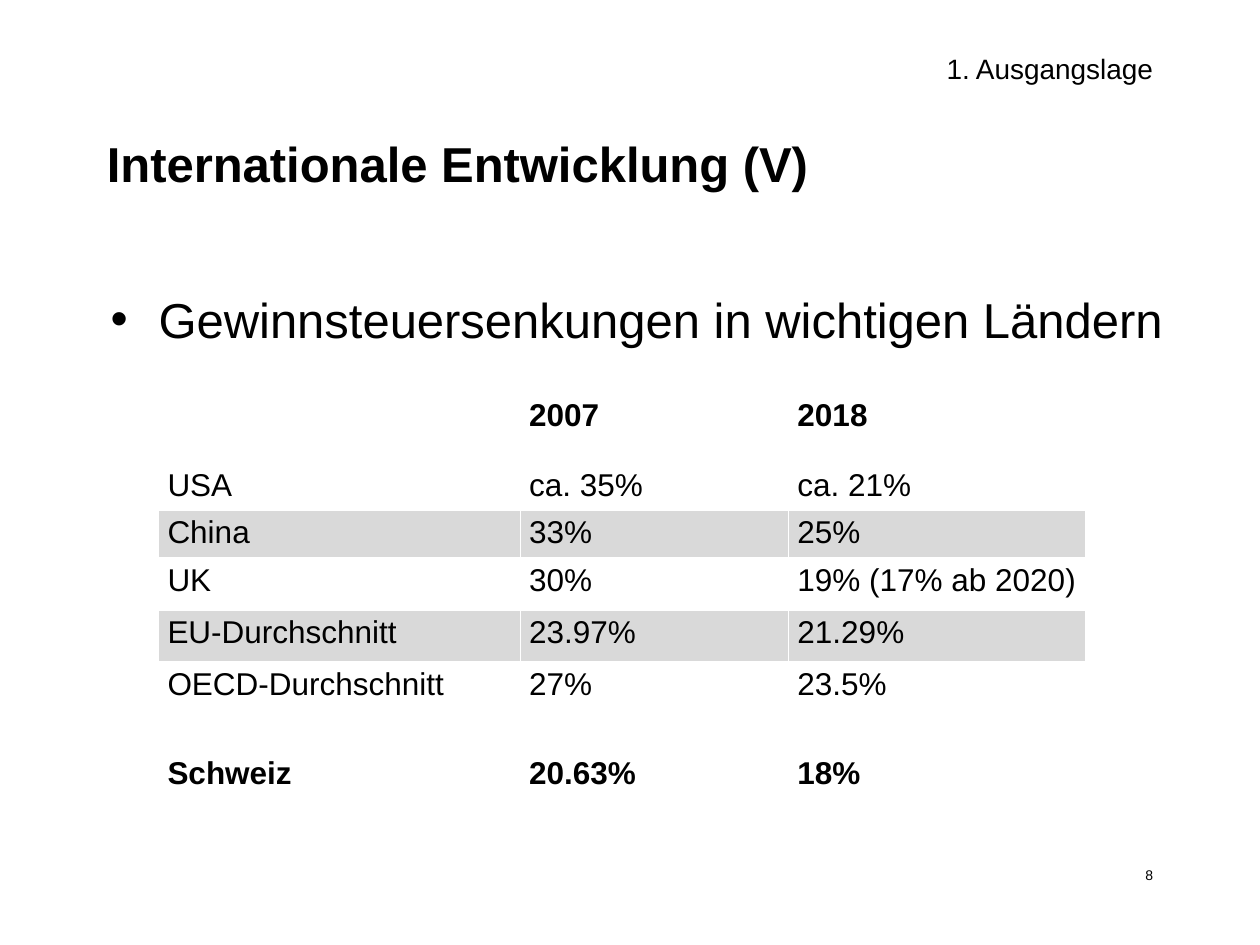
from dataclasses import dataclass

from lxml.etree import SubElement
from pptx import Presentation
from pptx.dml.color import RGBColor
from pptx.enum.text import MSO_ANCHOR, PP_ALIGN
from pptx.oxml.ns import qn
from pptx.util import Inches, Pt


@dataclass(frozen=True)
class Theme:
    font: str = "Arial"
    ink: str = "000000"
    paper: str = "FFFFFF"
    band: str = "D9D9D9"
    heading: int = 28
    section: int = 16
    table: int = 18
    number: int = 8
    rule: int = 1
    header_rule: int = 3


THEME = Theme()
TITLE = "Internationale Entwicklung (V)"
STATEMENT = "Gewinnsteuersenkungen in wichtigen Ländern"
SECTION = "1. Ausgangslage"
PAGE_NUMBER = "8"
TAX_RATES = [
    ("", "2007", "2018"),
    ("USA", "ca. 35%", "ca. 21%"),
    ("China", "33%", "25%"),
    ("UK", "30%", "19% (17% ab 2020)"),
    ("EU-Durchschnitt", "23.97%", "21.29%"),
    ("OECD-Durchschnitt", "27%", "23.5%"),
    ("Schweiz", "20.63%", "18%"),
]
BOLD_ROWS = {0, 6}
BANDED_ROWS = {2, 4}
COLUMN_WIDTHS = [2.87, 2.13, 2.36]
ROW_HEIGHTS = [0.55, 0.35, 0.35, 0.41, 0.41, 0.71, 0.41]


def style(font, size, bold=False):
    font.name = THEME.font
    font.size = Pt(size)
    font.bold = bold
    font.color.rgb = RGBColor.from_string(THEME.ink)


def add_text(slide, text, box, size, bold=False, align=PP_ALIGN.LEFT, anchor=MSO_ANCHOR.TOP):
    frame = slide.shapes.add_textbox(*map(Inches, box)).text_frame
    frame.word_wrap = True
    frame.vertical_anchor = anchor
    paragraph = frame.paragraphs[0]
    paragraph.alignment = align
    run = paragraph.add_run()
    run.text = text
    style(run.font, size, bold)
    return paragraph


def add_bullet(paragraph, indent):
    properties = paragraph._p.get_or_add_pPr()
    properties.set("marL", str(Inches(indent)))
    properties.set("indent", str(-Inches(indent)))
    SubElement(properties, qn("a:buFont"), typeface=THEME.font)
    SubElement(properties, qn("a:buChar"), char="•")


def add_borders(cell, bottom_width):
    properties = cell._tc.get_or_add_tcPr()
    widths = {"lnL": THEME.rule, "lnR": THEME.rule, "lnT": THEME.rule, "lnB": bottom_width}
    for side, width in widths.items():
        line = SubElement(properties, qn(f"a:{side}"), w=str(Pt(width)))
        fill = SubElement(line, qn("a:solidFill"))
        SubElement(fill, qn("a:srgbClr"), val=THEME.paper)


def fill_cell(cell, text, row):
    cell.margin_left = cell.margin_right = Inches(0.07)
    cell.margin_top = cell.margin_bottom = Inches(0.04)
    add_borders(cell, THEME.header_rule if row == 0 else THEME.rule)
    if row in BANDED_ROWS:
        cell.fill.solid()
        cell.fill.fore_color.rgb = RGBColor.from_string(THEME.band)
    else:
        cell.fill.background()
    if text:
        run = cell.text_frame.paragraphs[0].add_run()
        run.text = text
        style(run.font, THEME.table, row in BOLD_ROWS)


def add_tax_table(slide, left, top):
    size = (sum(COLUMN_WIDTHS), sum(ROW_HEIGHTS))
    table = slide.shapes.add_table(
        len(TAX_RATES), len(COLUMN_WIDTHS), *map(Inches, (left, top, *size))
    ).table
    table.horz_banding = False
    for column, width in zip(table.columns, COLUMN_WIDTHS):
        column.width = Inches(width)
    for row, height in zip(table.rows, ROW_HEIGHTS):
        row.height = Inches(height)
    for row, entries in enumerate(TAX_RATES):
        for column, text in enumerate(entries):
            fill_cell(table.cell(row, column), text, row)


def main():
    """Build the slide on corporate tax cuts in important countries."""
    deck = Presentation()
    deck.slide_width, deck.slide_height = Inches(10), Inches(7.5)
    slide = deck.slides.add_slide(deck.slide_layouts[6])
    slide.background.fill.solid()
    slide.background.fill.fore_color.rgb = RGBColor.from_string(THEME.paper)
    add_text(slide, TITLE, (0.75, 0.67, 8.5, 1.25), THEME.heading, True, anchor=MSO_ANCHOR.MIDDLE)
    statement = add_text(slide, STATEMENT, (0.78, 2.25, 8.82, 4.5), THEME.heading)
    add_bullet(statement, 0.38)
    add_text(slide, PAGE_NUMBER, (7.17, 6.83, 2.08, 0.5), THEME.number, align=PP_ALIGN.RIGHT)
    add_text(slide, SECTION, (5.39, 0.36, 3.86, 0.3), THEME.section, align=PP_ALIGN.RIGHT)
    add_tax_table(slide, 1.26, 3.12)
    deck.save("out.pptx")


if __name__ == "__main__":
    main()
